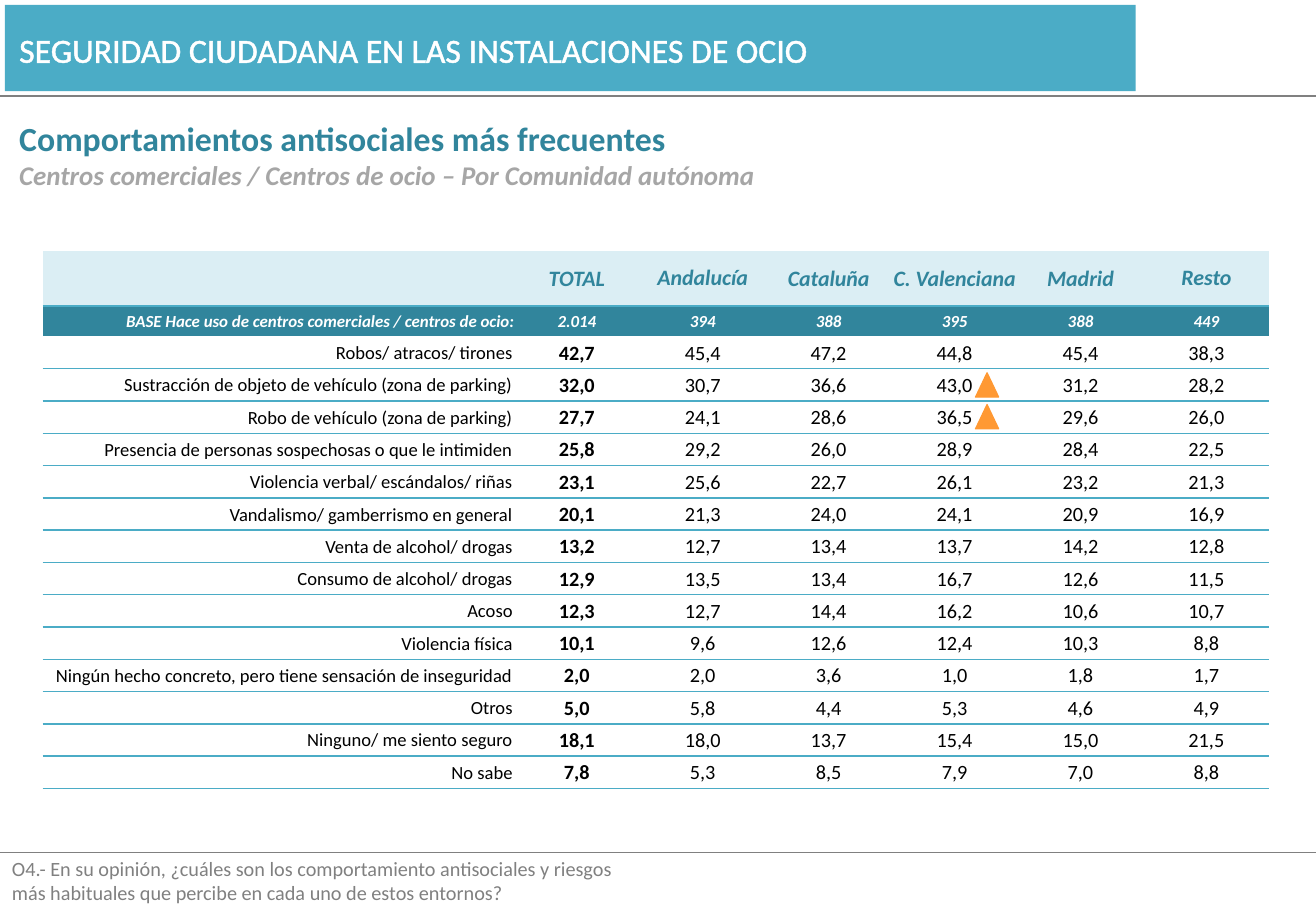
from lxml import etree
from pptx import Presentation
from pptx.dml.color import RGBColor
from pptx.enum.shapes import MSO_CONNECTOR, MSO_SHAPE
from pptx.enum.text import MSO_ANCHOR, PP_ALIGN
from pptx.oxml.ns import qn
from pptx.util import Pt

LINE = MSO_CONNECTOR.STRAIGHT
RECT = MSO_SHAPE.RECTANGLE
PEAK = MSO_SHAPE.ISOSCELES_TRIANGLE
MIDDLE = MSO_ANCHOR.MIDDLE
CENTER = PP_ALIGN.CENTER
RIGHT = PP_ALIGN.RIGHT

TEAL = "4BACC6"
DARK = "31859C"
PALE = "DBEEF4"
GREY = "808080"
ORANGE = "FF9933"
WHITE = "FFFFFF"
BLACK = "000000"
NO_GRID = "{2D5ABB26-0587-4C30-8999-92F81FD0307C}"

WIDE = 780
LEFT, TOP = 25.2, 149.04
LABEL, COL = 279.36, 74.64
HEAD, BASE, ROW = 32.4, 18, 19.15

HEADS = ["", "TOTAL", "Andalucía", "Cataluña", "C. Valenciana", "Madrid", "Resto"]
TIGHT = ["Andalucía", "Resto"]
BASES = ["BASE Hace uso de centros comerciales / centros de ocio:",
         "2.014", "394", "388", "395", "388", "449"]
DATA = [
    ("Robos/ atracos/ tirones", "42,7 45,4 47,2 44,8 45,4 38,3"),
    ("Sustracción de objeto de vehículo (zona de parking)", "32,0 30,7 36,6 43,0 31,2 28,2"),
    ("Robo de vehículo (zona de parking)", "27,7 24,1 28,6 36,5 29,6 26,0"),
    ("Presencia de personas sospechosas o que le intimiden", "25,8 29,2 26,0 28,9 28,4 22,5"),
    ("Violencia verbal/ escándalos/ riñas", "23,1 25,6 22,7 26,1 23,2 21,3"),
    ("Vandalismo/ gamberrismo en general", "20,1 21,3 24,0 24,1 20,9 16,9"),
    ("Venta de alcohol/ drogas", "13,2 12,7 13,4 13,7 14,2 12,8"),
    ("Consumo de alcohol/ drogas", "12,9 13,5 13,4 16,7 12,6 11,5"),
    ("Acoso", "12,3 12,7 14,4 16,2 10,6 10,7"),
    ("Violencia física", "10,1 9,6 12,6 12,4 10,3 8,8"),
    ("Ningún hecho concreto, pero tiene sensación de inseguridad", "2,0 2,0 3,6 1,0 1,8 1,7"),
    ("Otros", "5,0 5,8 4,4 5,3 4,6 4,9"),
    ("Ninguno/ me siento seguro", "18,1 18,0 13,7 15,4 15,0 21,5"),
    ("No sabe", "7,8 5,3 8,5 7,9 7,0 8,8"),
]


def paint(code):
    return RGBColor.from_string(code)


def style(para, size, color, bold=False, slant=False):
    for run in para.runs:
        font = run.font
        font.name = "Calibri"
        font.size = Pt(size)
        font.color.rgb = paint(color)
        font.bold = bold
        font.italic = slant


def add_rule(slide, y):
    rule = slide.shapes.add_connector(LINE, 0, Pt(y), Pt(WIDE), Pt(y))
    rule.line.color.rgb = paint(GREY)
    rule.line.width = Pt(0.75)
    etree.SubElement(rule._element.spPr, qn("a:effectLst"))


def add_block(slide, kind, x, y, w, h, color, edge=False):
    block = slide.shapes.add_shape(kind, Pt(x), Pt(y), Pt(w), Pt(h))
    block.shadow.inherit = False
    block.fill.solid()
    block.fill.fore_color.rgb = paint(color)
    if edge:
        block.line.color.rgb = paint(color)
        block.line.width = Pt(0.75)
    else:
        block.line.fill.background()


def add_text(slide, x, y, w, h, lines, wrap=True):
    box = slide.shapes.add_textbox(Pt(x), Pt(y), Pt(w), Pt(h))
    frame = box.text_frame
    frame.word_wrap = wrap
    frame.text = "\n".join(line[0] for line in lines)
    for para, line in zip(frame.paragraphs, lines):
        style(para, *line[1:])
    return frame


def add_edge(parent, tag, color, width, spot):
    edge = etree.Element(qn(tag), w=str(Pt(width)))
    fill = etree.SubElement(edge, qn("a:solidFill"))
    etree.SubElement(fill, qn("a:srgbClr"), val=color)
    parent.insert(spot, edge)


def set_cell(cell, text, align, size, color, bold, slant, fill, pad):
    cell.text_frame.text = text
    cell.vertical_anchor = MIDDLE
    cell.margin_left = cell.margin_right = cell.margin_top = Pt(pad)
    cell.margin_bottom = 0
    para = cell.text_frame.paragraphs[0]
    para.alignment = align
    if text in TIGHT:
        para.line_spacing = 0.9
    style(para, size, color, bold, slant)
    if fill:
        cell.fill.solid()
        cell.fill.fore_color.rgb = paint(fill)
    else:
        cell.fill.background()


def add_grid(slide):
    rows = [HEADS, BASES] + [[name] + nums.split() for name, nums in DATA]
    highs = [HEAD, BASE] + [ROW] * len(DATA)
    frame = slide.shapes.add_table(len(rows), len(HEADS), Pt(LEFT), Pt(TOP),
                                   Pt(LABEL + 6 * COL), Pt(sum(highs)))
    grid = frame.table
    grid.first_row = grid.horz_banding = False
    grid._tbl.tblPr.find(qn("a:tableStyleId")).text = NO_GRID
    for col, width in zip(grid.columns, [LABEL] + [COL] * 6):
        col.width = Pt(width)
    for r, row in enumerate(rows):
        grid.rows[r].height = Pt(highs[r])
        for c, text in enumerate(row):
            cell = grid.cell(r, c)
            align = CENTER if c else RIGHT
            if r == 0:
                set_cell(cell, text, align, 13, DARK, True, True, PALE, 0)
            elif r == 1:
                set_cell(cell, text, align, 10, WHITE, True, True, DARK, 0)
            else:
                size = 12 if c else 11
                set_cell(cell, text, align, size, BLACK, c == 1, False, None, 0.72)
            if r != 1:
                add_edge(cell._tc.get_or_add_tcPr(), "a:lnB", TEAL, 1, 0)


def main():
    deck = Presentation()
    deck.slide_width, deck.slide_height = Pt(WIDE), Pt(540)
    slide = deck.slides.add_slide(deck.slide_layouts[6])
    add_rule(slide, 505.4)
    add_rule(slide, 56.9)
    add_text(slide, 4.3, 66.2, 680.4, 51.1, [
        ("Comportamientos antisociales más frecuentes", 20, DARK, True),
        ("Centros comerciales / Centros de ocio – Por Comunidad autónoma",
         16, "A6A6A6", True, True)])
    add_block(slide, RECT, 2.9, 2.9, 670.3, 51.1, TEAL)
    title = add_text(slide, 4.3, 13.7, 485.3, 31.7, [
        ("SEGURIDAD CIUDADANA EN LAS INSTALACIONES DE OCIO", 20, WHITE)], False)
    run = title.paragraphs[0].runs[0]
    add_edge(run._r.get_or_add_rPr(), "a:ln", WHITE, 0.75, 0)
    note = add_text(slide, 0, 504, 594, 36, [("", 12, GREY)])
    note.paragraphs[0].text = (
        "O4.- En su opinión, ¿cuáles son los comportamiento antisociales y riesgos \v"
        "más habituales que percibe en cada uno de estos entornos?")
    style(note.paragraphs[0], 12, GREY)
    add_grid(slide)
    for step in range(2):
        add_block(slide, PEAK, 578.2, 221 + step * 18.8, 13.7, 14.4, ORANGE, True)
    deck.save("out.pptx")


if __name__ == "__main__":
    main()
